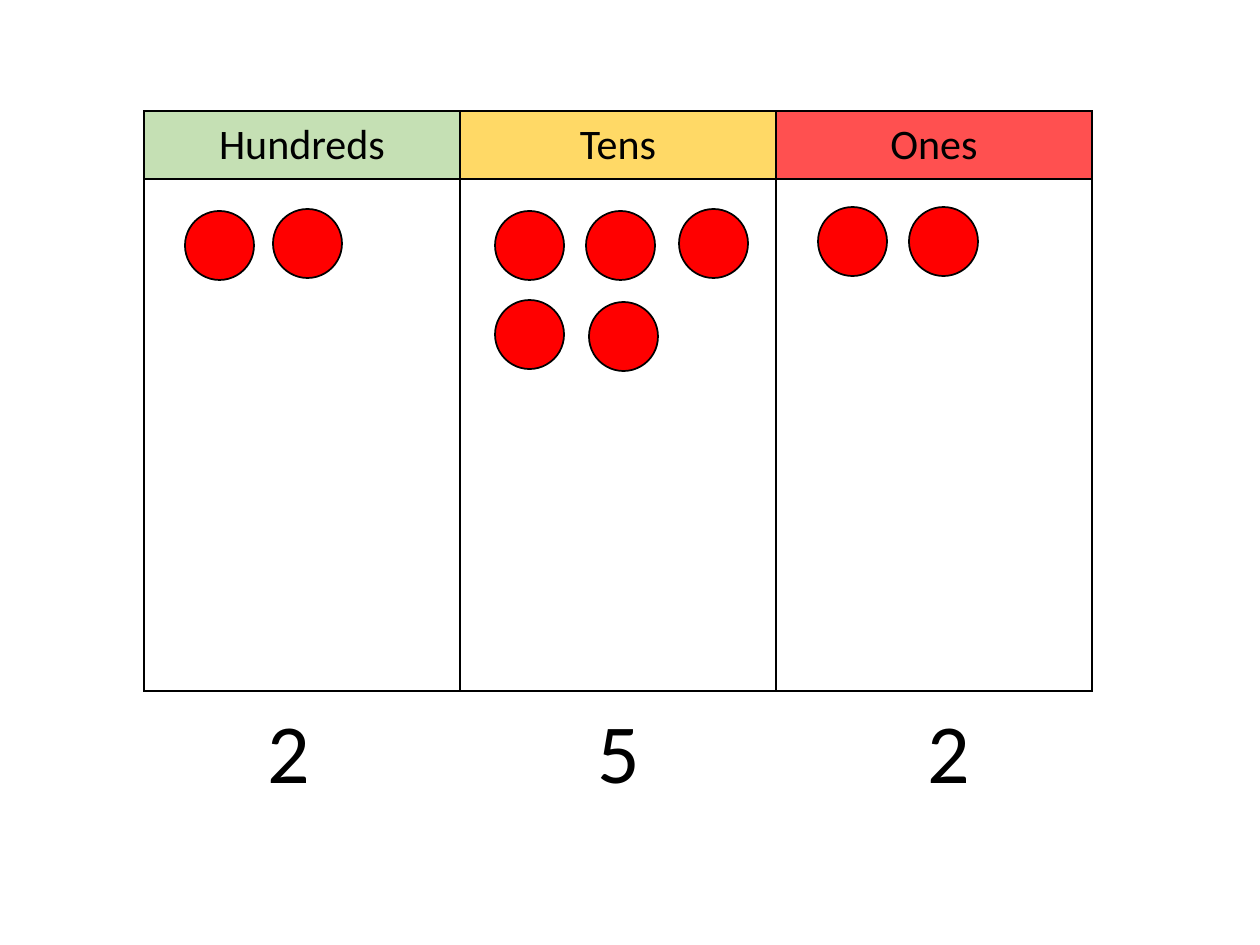
import pptx
import pptx.dml.color
import pptx.enum.shapes
import pptx.enum.text
import pptx.oxml
import pptx.oxml.ns
import pptx.util

PX = pptx.util.Inches(1) / 126
THEME = {
    "font": "Calibri",
    "ink": "000000",
    "counter": "FF0000",
    "header_size": 24,
    "digit_size": 48,
    "line_width": 1,
}
COUNTER_SIZE = 69
COLUMN_WIDTH = 316
ROW_HEIGHTS = (68, 512)

# Each place value: heading, heading fill, top-left corners of its counters
PLACES = (
    ("Hundreds", "C5E0B4", ((185, 211), (273, 209))),
    ("Tens", "FFD966",
     ((495, 211), (586, 211), (679, 209), (495, 300), (589, 302))),
    ("Ones", "FF5050", ((818, 207), (909, 207))),
)


def px(*lengths):
    return [pptx.util.Emu(round(length * PX)) for length in lengths]


def rgb(value):
    return pptx.dml.color.RGBColor.from_string(value)


def fill_solid(part, color):
    part.fill.solid()
    part.fill.fore_color.rgb = rgb(color)


def write(frame, text, size, **paragraph_format):
    paragraph = frame.paragraphs[0]
    paragraph.text = text
    for name, value in paragraph_format.items():
        setattr(paragraph, name, value)
    font = paragraph.runs[0].font
    for name, value in {"name": THEME["font"], "size": pptx.util.Pt(size)}.items():
        setattr(font, name, value)
    font.color.rgb = rgb(THEME["ink"])


def add_borders(cell):
    properties = cell._tc.get_or_add_tcPr()
    width = pptx.util.Pt(THEME["line_width"])
    for side in "LRTB":
        properties.append(pptx.oxml.parse_xml(
            f'<a:ln{side} {pptx.oxml.ns.nsdecls("a")} w="{width}"><a:solidFill>'
            f'<a:srgbClr val="{THEME["ink"]}"/></a:solidFill></a:ln{side}>'))


def add_place_value_table(slide):
    bounds = px(144, 111, COLUMN_WIDTH * len(PLACES), sum(ROW_HEIGHTS))
    table = slide.shapes.add_table(len(ROW_HEIGHTS), len(PLACES), *bounds).table
    table.first_row = table.horz_banding = False
    for row, height in zip(table.rows, px(*ROW_HEIGHTS)):
        row.height = height
    for index, (heading, color, _) in enumerate(PLACES):
        table.columns[index].width = px(COLUMN_WIDTH)[0]
        header, body = table.cell(0, index), table.cell(1, index)
        for cell in (header, body):
            add_borders(cell)
        fill_solid(header, color)
        body.fill.background()
        header.vertical_anchor = pptx.enum.text.MSO_ANCHOR.MIDDLE
        write(header.text_frame, heading, THEME["header_size"],
              alignment=pptx.enum.text.PP_ALIGN.CENTER)


def add_digit(slide, digit, left):
    frame = slide.shapes.add_textbox(*px(left, 693, 185, 115)).text_frame
    frame.word_wrap = True
    frame.auto_size = pptx.enum.text.MSO_AUTO_SIZE.SHAPE_TO_FIT_TEXT
    write(frame, digit, THEME["digit_size"])


def add_counter(slide, left, top):
    counter = slide.shapes.add_shape(
        pptx.enum.shapes.MSO_SHAPE.OVAL,
        *px(left, top, COUNTER_SIZE, COUNTER_SIZE))
    counter.shadow.inherit = False
    fill_solid(counter, THEME["counter"])
    counter.line.color.rgb = rgb(THEME["ink"])
    counter.line.width = pptx.util.Pt(THEME["line_width"])


def main():
    deck = pptx.Presentation()
    deck.slide_width, deck.slide_height = px(1260, 945)
    slide = deck.slides.add_slide(deck.slide_layouts[6])
    add_place_value_table(slide)
    for index, (_, _, corners) in enumerate(PLACES):
        add_digit(slide, str(len(corners)), 255 + 330 * index)
        for left, top in corners:
            add_counter(slide, left, top)
    deck.save("out.pptx")


if __name__ == "__main__":
    main()
